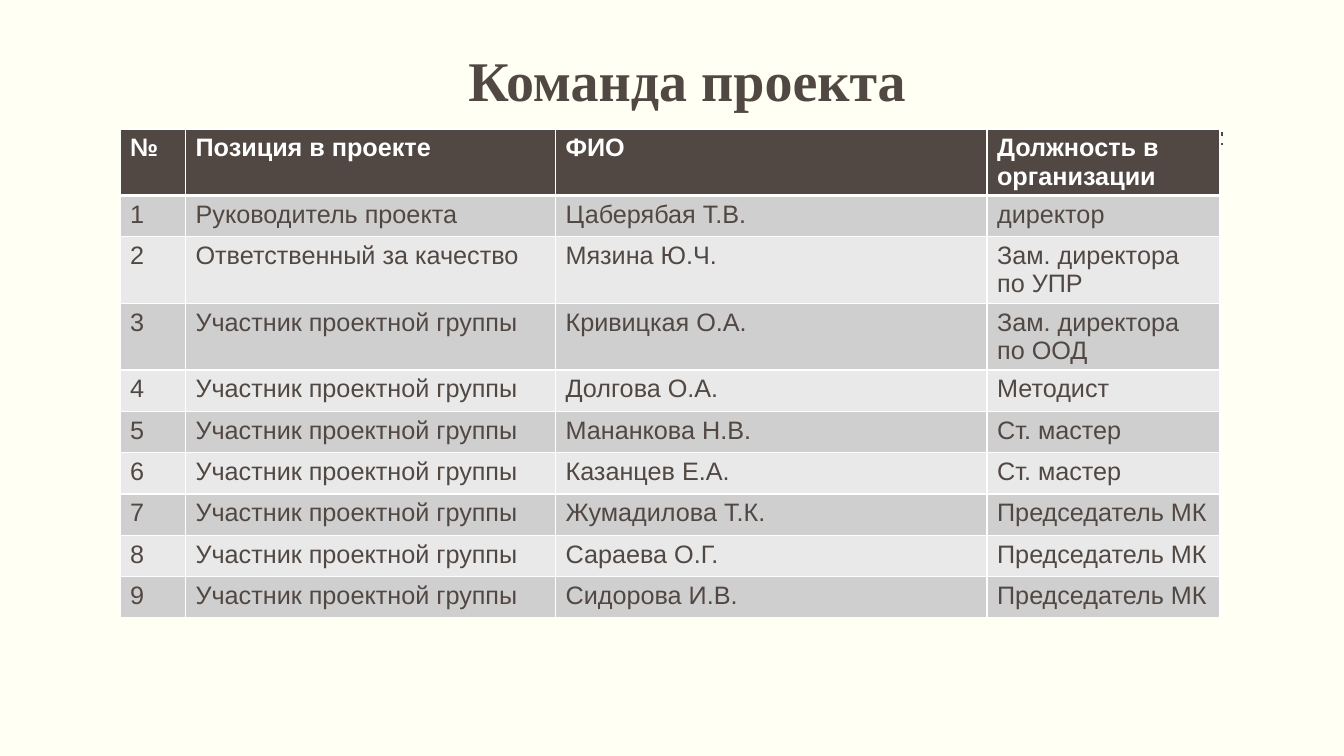
import pptx
import pptx.dml.color
import pptx.enum.shapes
import pptx.enum.text
import pptx.oxml.ns
import pptx.util
from lxml import etree

Inches, Pt = pptx.util.Inches, pptx.util.Pt
qn = pptx.oxml.ns.qn

DARK, WHITE, PAPER = "514843", "FFFFFF", "FFFFF3"
BANDS = ("D0CFCF", "E9E9E9")
COLUMN_WIDTHS = (0.65, 3.67, 4.28, 2.31)
ROW_HEIGHT = 0.41
HEADER = ("№", "Позиция в проекте", "ФИО", "Должность в организации")
MEMBER = "Участник проектной группы"
TEAM = (
    ("Руководитель проекта", "Цаберябая Т.В.", "директор"),
    ("Ответственный за качество", "Мязина Ю.Ч.", "Зам. директора по УПР"),
    (MEMBER, "Кривицкая О.А.", "Зам. директора по ООД"),
    (MEMBER, "Долгова О.А.", "Методист"),
    (MEMBER, "Мананкова Н.В.", "Ст. мастер"),
    (MEMBER, "Казанцев Е.А.", "Ст. мастер"),
    (MEMBER, "Жумадилова Т.К.", "Председатель МК"),
    (MEMBER, "Сараева О.Г.", "Председатель МК"),
    (MEMBER, "Сидорова И.В.", "Председатель МК"),
)


def rgb(value):
    """Turn a hex string into a colour."""
    return pptx.dml.color.RGBColor.from_string(value)


def set_text(tf, text, size=18, font="Arial", color=DARK, bold=False,
             align=None, spacing=None):
    """Write one formatted paragraph into a text frame."""
    p = tf.paragraphs[0]
    p.alignment = align
    p.line_spacing = spacing
    r = p.add_run()
    r.text = text
    r.font.size = Pt(size)
    r.font.name = font
    r.font.bold = bold
    r.font.color.rgb = rgb(color)


def add_rule(s, y, width):
    """Draw a horizontal rule without a shadow."""
    line = s.shapes.add_connector(
        pptx.enum.shapes.MSO_CONNECTOR.STRAIGHT,
        Inches(12.13), Inches(y), Inches(1.21), Inches(y))
    line.line.color.rgb = rgb(DARK)
    line.line.width = Pt(width)
    etree.SubElement(line._element.spPr, qn("a:effectLst"))


def add_title(s, text):
    """Place and format the title placeholder."""
    sp = s.shapes.title
    sp.left, sp.top = Inches(1.36), Inches(0.21)
    sp.width, sp.height = Inches(10.91), Inches(0.97)
    tf = sp.text_frame
    tf.word_wrap = True
    tf.vertical_anchor = pptx.enum.text.MSO_ANCHOR.BOTTOM
    tf.margin_left = tf.margin_right = 0
    tf.margin_top = tf.margin_bottom = Inches(0.05)
    set_text(tf, text, size=40, font="Times New Roman", bold=True,
             align=pptx.enum.text.PP_ALIGN.CENTER, spacing=0.9)


def set_borders(cell, **widths):
    """Give a cell white borders; widths in points are keyed L, R, T, B."""
    tcPr = cell._tc.get_or_add_tcPr()
    for side, width in widths.items():
        ln = etree.SubElement(tcPr, qn("a:ln" + side), w=str(Pt(width)))
        fill = etree.SubElement(ln, qn("a:solidFill"))
        etree.SubElement(fill, qn("a:srgbClr"), val=WHITE)


def add_team_table(s):
    """Add the table with a dark header and alternating row fills."""
    rows = [HEADER] + [(str(n), *row) for n, row in enumerate(TEAM, 1)]
    table = s.shapes.add_table(
        len(rows), len(HEADER), Inches(1.19), Inches(1.28),
        Inches(sum(COLUMN_WIDTHS)), Inches(ROW_HEIGHT * len(rows))).table
    for column, width in zip(table.columns, COLUMN_WIDTHS):
        column.width = Inches(width)
    for i, row in enumerate(rows):
        table.rows[i].height = Inches(ROW_HEIGHT)
        header = i == 0
        for j, text in enumerate(row):
            cell = table.cell(i, j)
            set_borders(cell, L=1, R=1, T=3 if i == 1 else 1,
                        B=3 if header else 1)
            cell.fill.solid()
            cell.fill.fore_color.rgb = rgb(DARK if header else BANDS[(i - 1) % 2])
            set_text(cell.text_frame, text, bold=header,
                     color=WHITE if header else DARK)


def main():
    """Build and save the slide."""
    prs = pptx.Presentation()
    prs.slide_width, prs.slide_height = Inches(13.33), Inches(7.5)
    s = prs.slides.add_slide(prs.slide_layouts[5])
    s.background.fill.solid()
    s.background.fill.fore_color.rgb = rgb(PAPER)
    add_rule(s, 1.33, 3)
    add_rule(s, 1.43, 1)
    add_title(s, "Команда проекта")
    add_team_table(s)
    prs.save("out.pptx")


main()
